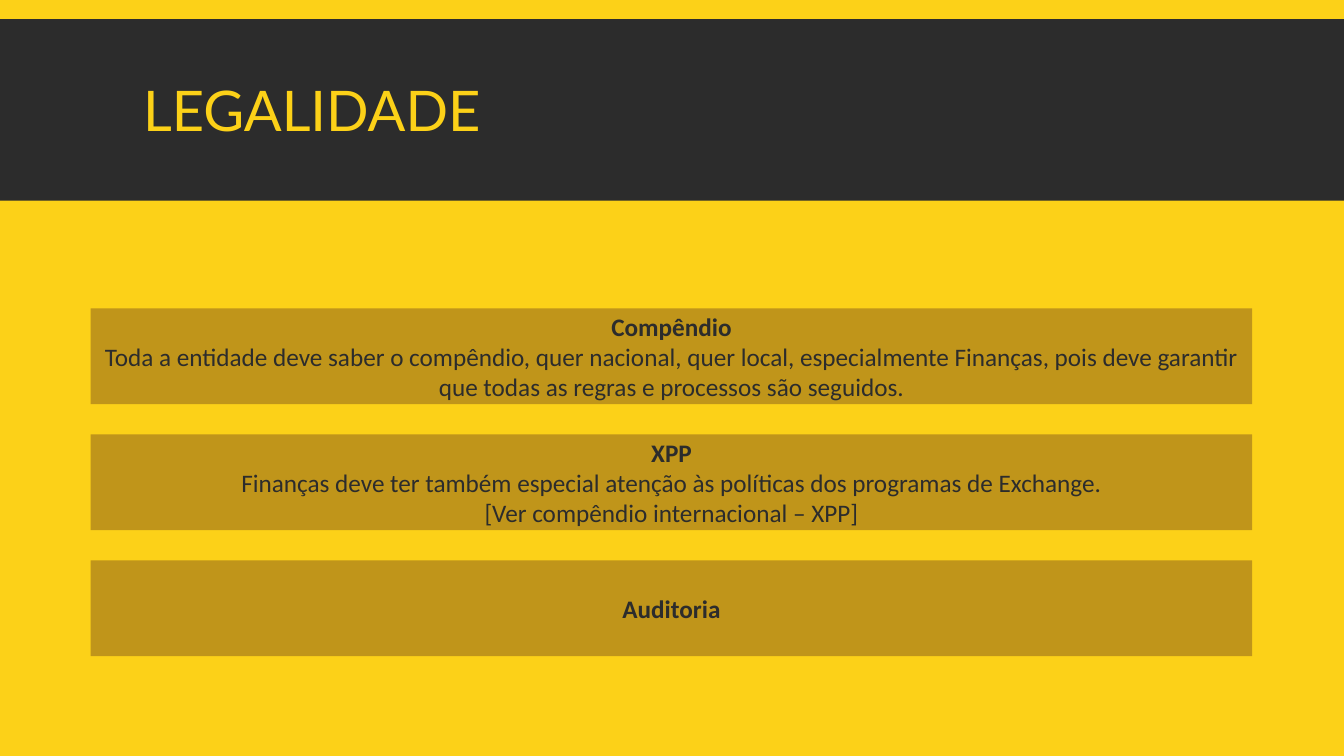
"""Build the LEGALIDADE slide: a titled band above three stacked panels."""
from dataclasses import dataclass

from pptx import Presentation
from pptx.dml.color import RGBColor
from pptx.enum.shapes import MSO_SHAPE
from pptx.enum.text import MSO_ANCHOR, MSO_AUTO_SIZE, PP_ALIGN
from pptx.shapes.autoshape import Shape
from pptx.slide import Slide
from pptx.util import Inches, Pt

RECT = MSO_SHAPE.RECTANGLE
MIDDLE = MSO_ANCHOR.MIDDLE
FIXED = MSO_AUTO_SIZE.NONE
LEFT, CENTER = PP_ALIGN.LEFT, PP_ALIGN.CENTER


@dataclass(frozen=True)
class Theme:
    yellow: RGBColor = RGBColor.from_string("FCD118")
    dark: RGBColor = RGBColor.from_string("2C2C2C")
    gold: RGBColor = RGBColor.from_string("C0951A")
    head: str = "Lato"
    body: str = "Calibri"
    big: Pt = Pt(40)
    small: Pt = Pt(18)


@dataclass(frozen=True)
class Panel:
    title: str
    lines: tuple[str, ...] = ()


THEME = Theme()
WIDTH = 13.33
TOP, STEP = 3.06, 1.25
PANELS = (
    Panel("Compêndio", (
        "Toda a entidade deve saber o compêndio, quer nacional, quer local, "
        "especialmente Finanças, pois deve garantir que todas as regras e "
        "processos são seguidos.",
    )),
    Panel("XPP", (
        "Finanças deve ter também especial atenção às políticas dos "
        "programas de Exchange.",
        "[Ver compêndio internacional – XPP]",
    )),
    Panel("Auditoria"),
)


def add_rect(slide: Slide, x: float, y: float, w: float, h: float,
             color: RGBColor) -> Shape:
    rect = slide.shapes.add_shape(RECT, Inches(x), Inches(y), Inches(w), Inches(h))
    rect.shadow.inherit = False
    rect.fill.solid()
    rect.fill.fore_color.rgb = color
    rect.line.fill.background()
    return rect


def add_head(slide: Slide, text: str) -> None:
    title = slide.shapes.title
    band = add_rect(slide, 0, 0.19, WIDTH, 1.8, THEME.dark)
    title.element.addprevious(band.element)
    title.left, title.top = Inches(1.32), Inches(0.31)
    title.width, title.height = Inches(10.7), Inches(1.65)
    frame = title.text_frame
    frame.text = text
    frame.auto_size = FIXED
    frame.vertical_anchor = MIDDLE
    para = frame.paragraphs[0]
    para.alignment = LEFT
    para.line_spacing = 0.85
    para.font.name = THEME.head
    para.font.size = THEME.big
    para.font.color.rgb = THEME.yellow


def add_panel(slide: Slide, panel: Panel, y: float) -> None:
    frame = add_rect(slide, 0.9, y, 11.52, 0.95, THEME.gold).text_frame
    frame.word_wrap = True
    frame.vertical_anchor = MIDDLE
    frame.text = "\n".join((panel.title, *panel.lines))
    for row, para in enumerate(frame.paragraphs):
        para.alignment = CENTER
        para.font.name = THEME.body
        para.font.size = THEME.small
        para.font.bold = row == 0
        para.font.color.rgb = THEME.dark


def main() -> None:
    deck = Presentation()
    deck.slide_width, deck.slide_height = Inches(WIDTH), Inches(7.5)
    slide = deck.slides.add_slide(deck.slide_layouts.get_by_name("Title Only"))
    slide.background.fill.solid()
    slide.background.fill.fore_color.rgb = THEME.yellow
    add_head(slide, "LEGALIDADE")
    for row, panel in enumerate(PANELS):
        add_panel(slide, panel, TOP + row * STEP)
    deck.save("out.pptx")


if __name__ == "__main__":
    main()
